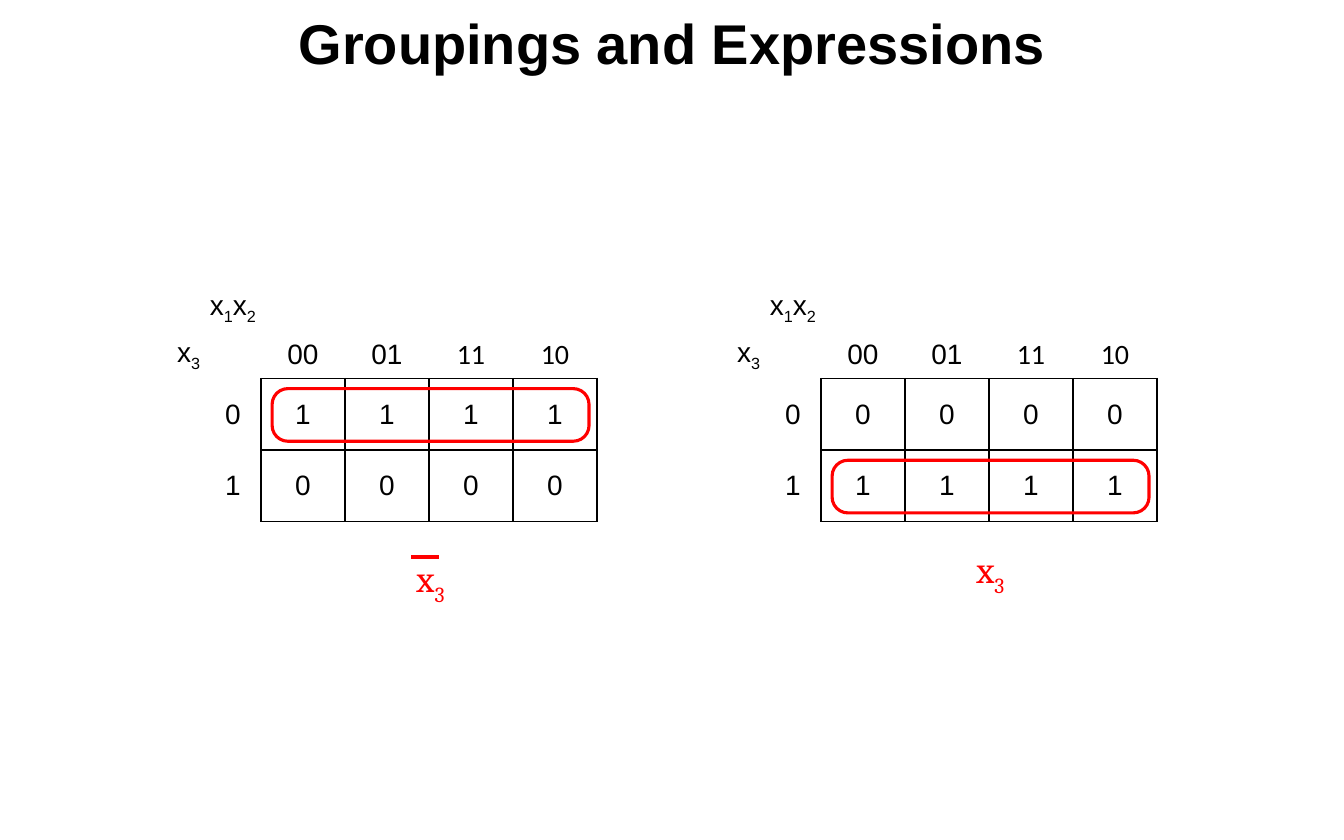
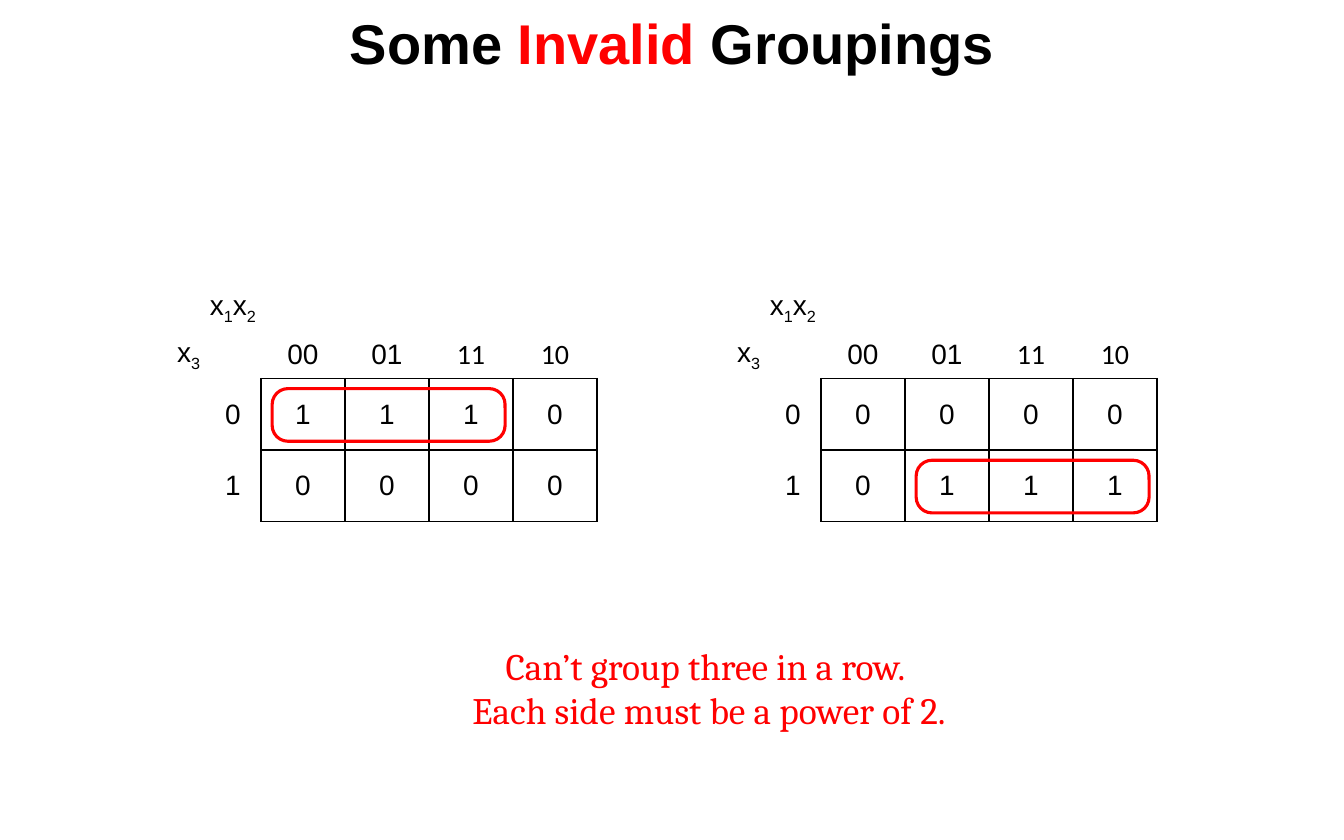
"""Build two slides of Karnaugh maps with valid and invalid groupings."""
from lxml import etree
from pptx import Presentation
from pptx import util as u
from pptx.dml.color import RGBColor
from pptx.enum import shapes, text
from pptx.oxml import ns

BLACK, WHITE, RED = "000000", "FFFFFF", "FF0000"
COLS = [0.5, 0.5] + [0.75] * 4
ROWS = [0.42, 0.42, 0.64, 0.64]
TOP = 2.54
LEFTS = [1.33, 6.33]
HEAD = 2
INDENT = 0.21
CODES = ["00", "01", "11", "10"]
SIDES = {"L": (0, -1), "R": (0, 1), "T": (-1, 0), "B": (1, 0)}

SLIDES = [
    {
        "title": ["Groupings and Expressions"],
        "maps": [["1111", "0000"], ["0000", "1111"]],
        "notes": [
            {"at": (3.62, 4.91, 0.48, 0.51), "lines": [["x", "3"]]},
            {"at": (8.62, 4.83, 0.5, 0.51), "lines": [["x", "3"]]},
        ],
        "bar": (3.67, 4.97, 3.92, 4.97),
    },
    {
        "title": ["Some ", "Invalid", " Groupings"],
        "maps": [["1110", "0000"], ["0000", "0111"]],
        "notes": [
            {"at": (4.08, 5.69, 4.5, 0.91), "center": True,
             "lines": [["Can’t group three in a row. "],
                       ["Each side must be a power of 2."]]},
        ],
    },
]


def color(code):
    return RGBColor.from_string(code)


def inches(nums):
    return [u.Inches(n) for n in nums]


def lower(run):
    run._r.get_or_add_rPr().set("baseline", "-25000")


def redden(run):
    run.font.color.rgb = color(RED)


def write(para, parts, size, tint=BLACK, face="Arial", mark=lower, bold=False):
    """Write the parts as runs and mark every second one."""
    for i, part in enumerate(parts):
        run = para.add_run()
        run.text = part
        font = run.font
        font.size, font.name, font.bold = u.Pt(size), face, bold
        font.color.rgb = color(tint)
        if i % 2:
            mark(run)


def inner(row, col):
    return HEAD <= row < len(ROWS) and HEAD <= col < len(COLS)


def edge(cell, row, col):
    """Draw black lines around the map's values and white ones elsewhere."""
    props = cell._tc.get_or_add_tcPr()
    for side, (down, right) in SIDES.items():
        dark = inner(row, col) or inner(row + down, col + right)
        wide = {row, row + down} == {0, 1}
        line = etree.SubElement(props, ns.qn("a:ln" + side),
                                w=str(u.Pt(3 if wide else 1)))
        fill = etree.SubElement(line, ns.qn("a:solidFill"))
        etree.SubElement(fill, ns.qn("a:srgbClr"), val=BLACK if dark else WHITE)


def add_map(slide, left, bits):
    size = inches([left, TOP, sum(COLS), sum(ROWS)])
    table = slide.shapes.add_table(len(ROWS), len(COLS), *size).table
    table.first_row = table.horz_banding = False
    for col, width in zip(table.columns, COLS):
        col.width = u.Inches(width)
    for row, height in zip(table.rows, ROWS):
        row.height = u.Inches(height)
    words = {(0, 1): ["x", "1", "x", "2"], (1, 0): ["x", "3"]}
    words.update({(1, HEAD + i): [code] for i, code in enumerate(CODES)})
    for r, line in enumerate(bits):
        words[HEAD + r, 1] = [str(r)]
        words.update({(HEAD + r, HEAD + c): [bit] for c, bit in enumerate(line)})
    for r in range(len(ROWS)):
        for c in range(len(COLS)):
            cell = table.cell(r, c)
            edge(cell, r, c)
            cell.fill.solid()
            cell.fill.fore_color.rgb = color(WHITE)
            cell.margin_left = u.Inches(INDENT if (r, c) == (1, 0) else 0)
            cell.margin_right = cell.margin_top = cell.margin_bottom = 0
            cell.vertical_anchor = text.MSO_ANCHOR.MIDDLE
            para = cell.text_frame.paragraphs[0]
            para.alignment = text.PP_ALIGN.CENTER
            parts = words.get((r, c), [])
            face = "Calibri" if parts in (["11"], ["10"]) else "Arial"
            write(para, parts, 18, face=face)


def add_loop(slide, left, bits):
    """Ring the run of ones in the map."""
    row = next(i for i, line in enumerate(bits) if "1" in line)
    first, count = bits[row].index("1"), bits[row].count("1")
    x = left + sum(COLS[:HEAD + first]) + 0.1
    y = TOP + sum(ROWS[:HEAD + row]) + 0.09
    size = inches([x, y, count * COLS[-1] - 0.17, 0.47])
    loop = slide.shapes.add_shape(shapes.MSO_SHAPE.ROUNDED_RECTANGLE, *size)
    loop.adjustments[0] = 0.3
    loop.shadow.inherit = False
    loop.fill.background()
    loop.line.color.rgb = color(RED)
    loop.line.width = u.Pt(2)


def add_note(slide, note):
    frame = slide.shapes.add_textbox(*inches(note["at"])).text_frame
    frame.word_wrap = False
    for i, parts in enumerate(note["lines"]):
        para = frame.add_paragraph() if i else frame.paragraphs[0]
        if note.get("center"):
            para.alignment = text.PP_ALIGN.CENTER
        write(para, parts, 24, RED, "Cambria")


def add_bar(slide, ends):
    bar = slide.shapes.add_connector(shapes.MSO_CONNECTOR.STRAIGHT, *inches(ends))
    bar.line.color.rgb = color(RED)
    bar.line.width = u.Pt(2.5)
    etree.SubElement(bar._element.spPr, ns.qn("a:effectLst"))


def add_title(slide, parts):
    title = slide.shapes.title
    title.left, title.top, title.width, title.height = inches([1, 0, 10, 0.75])
    title.text_frame.vertical_anchor = text.MSO_ANCHOR.MIDDLE
    para = title.text_frame.paragraphs[0]
    para.alignment = text.PP_ALIGN.CENTER
    write(para, parts, 36, mark=redden, bold=True)


def main():
    deck = Presentation()
    deck.slide_width, deck.slide_height = inches([12, 7.5])
    for page in SLIDES:
        slide = deck.slides.add_slide(deck.slide_layouts[5])
        add_title(slide, page["title"])
        for left, bits in zip(LEFTS, page["maps"]):
            add_map(slide, left, bits)
            add_loop(slide, left, bits)
        for note in page["notes"]:
            add_note(slide, note)
        if "bar" in page:
            add_bar(slide, page["bar"])
    deck.save("out.pptx")


if __name__ == "__main__":
    main()
